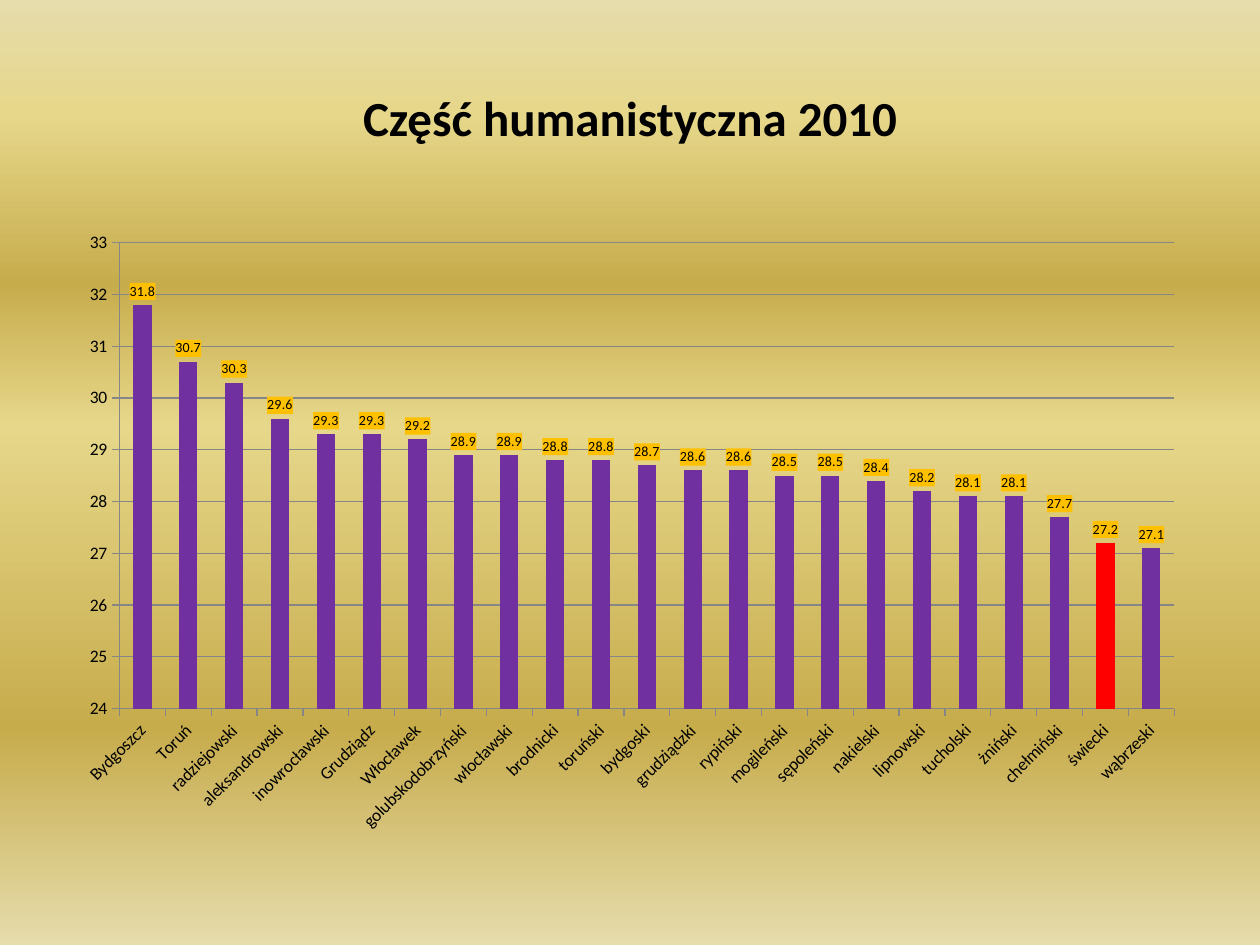
from lxml import etree
from pptx import Presentation
from pptx.chart import data as cd
from pptx.dml.color import RGBColor
from pptx.enum import chart as ce, text as te
from pptx.oxml import ns
from pptx.util import Pt

BLACK = RGBColor(0x00, 0x00, 0x00)
GREY = RGBColor(0x86, 0x86, 0x86)
PURPLE = RGBColor(0x70, 0x30, 0xA0)
RED = RGBColor(0xFF, 0x00, 0x00)
AMBER = RGBColor(0xFF, 0xC0, 0x00)
SAND = RGBColor(0xE6, 0xDC, 0xAC)
STRAW = RGBColor(0xE6, 0xD7, 0x8A)
GOLD = RGBColor(0xC7, 0xAC, 0x4C)
STOPS = [(0, SAND), (12, STRAW), (30, GOLD), (45, STRAW), (77, GOLD), (100, SAND)]

SCORES = {
    "Bydgoszcz": 31.8, "Toruń": 30.7, "radziejowski": 30.3, "aleksandrowski": 29.6,
    "inowrocławski": 29.3, "Grudziądz": 29.3, "Włocławek": 29.2,
    "golubskodobrzyński": 28.9, "włocławski": 28.9, "brodnicki": 28.8,
    "toruński": 28.8, "bydgoski": 28.7, "grudziądzki": 28.6, "rypiński": 28.6,
    "mogileński": 28.5, "sępoleński": 28.5, "nakielski": 28.4, "lipnowski": 28.2,
    "tucholski": 28.1, "żniński": 28.1, "chełmiński": 27.7, "świecki": 27.2,
    "wąbrzeski": 27.1,
}


def set_font(font, **fmt):
    font.color.rgb = BLACK
    for name, value in {"name": "Calibri", **fmt}.items():
        setattr(font, name, value)


def add_solid_fill(parent, color):
    fill = etree.SubElement(parent, ns.qn("a:solidFill"))
    etree.SubElement(fill, ns.qn("a:srgbClr"), val=str(color))


prs = Presentation()
prs.slide_width, prs.slide_height = Pt(720), Pt(540)
s = prs.slides.add_slide(prs.slide_layouts[5])

bg = s.background.fill
bg.gradient()
bg.gradient_angle = 270
gs_lst = s.background.fill._xPr.find(ns.qn("a:gradFill")).find(ns.qn("a:gsLst"))
for gs in list(gs_lst):
    gs_lst.remove(gs)
for pos, color in STOPS:
    gs = etree.SubElement(gs_lst, ns.qn("a:gs"), pos=str(pos * 1000))
    etree.SubElement(gs, ns.qn("a:srgbClr"), val=str(color))

title = s.shapes.title
for name, value in {"left": 36, "top": 21.6, "width": 648, "height": 90}.items():
    setattr(title, name, Pt(value))
tf = title.text_frame
tf.vertical_anchor = te.MSO_ANCHOR.MIDDLE
p = tf.paragraphs[0]
p.alignment = te.PP_ALIGN.CENTER
r = p.add_run()
r.text = "Część humanistyczna 2010"
set_font(r.font, size=Pt(28), bold=True)

data = cd.CategoryChartData()
data.categories = list(SCORES)
data.add_series("Series 1", list(SCORES.values()))
chart = s.shapes.add_chart(ce.XL_CHART_TYPE.COLUMN_CLUSTERED,
                           Pt(36), Pt(126), Pt(648), Pt(356.4), data).chart
chart.has_title = False
chart.has_legend = False
set_font(chart.font, size=Pt(10))

cat_axis, val_axis = chart.category_axis, chart.value_axis
for axis in (cat_axis, val_axis):
    axis.major_tick_mark = ce.XL_TICK_MARK.OUTSIDE
    axis.minor_tick_mark = ce.XL_TICK_MARK.NONE
    axis.format.line.color.rgb = GREY
    axis.format.line.width = Pt(0.75)
    set_font(axis.tick_labels.font, size=Pt(10))
cat_axis._element.find(ns.qn("c:txPr")).find(ns.qn("a:bodyPr")).set("rot", "-2700000")
for name, value in {"minimum_scale": 24, "maximum_scale": 33, "major_unit": 1,
                    "has_major_gridlines": True}.items():
    setattr(val_axis, name, value)
val_axis.major_gridlines.format.line.color.rgb = GREY
val_axis.major_gridlines.format.line.width = Pt(0.75)

plot = chart.plots[0]
plot.gap_width = 150
plot.vary_by_categories = False
series = plot.series[0]
series.format.fill.solid()
series.format.fill.fore_color.rgb = PURPLE
highlight = series.points[list(SCORES).index("świecki")].format.fill
highlight.solid()
highlight.fore_color.rgb = RED

labels = series.data_labels
labels.show_value = True
labels.position = ce.XL_LABEL_POSITION.OUTSIDE_END
set_font(labels.font, size=Pt(8))
sp_pr = etree.Element(ns.qn("c:spPr"))
add_solid_fill(sp_pr, AMBER)
labels._element.find(ns.qn("c:txPr")).addprevious(sp_pr)

prs.save("out.pptx")
